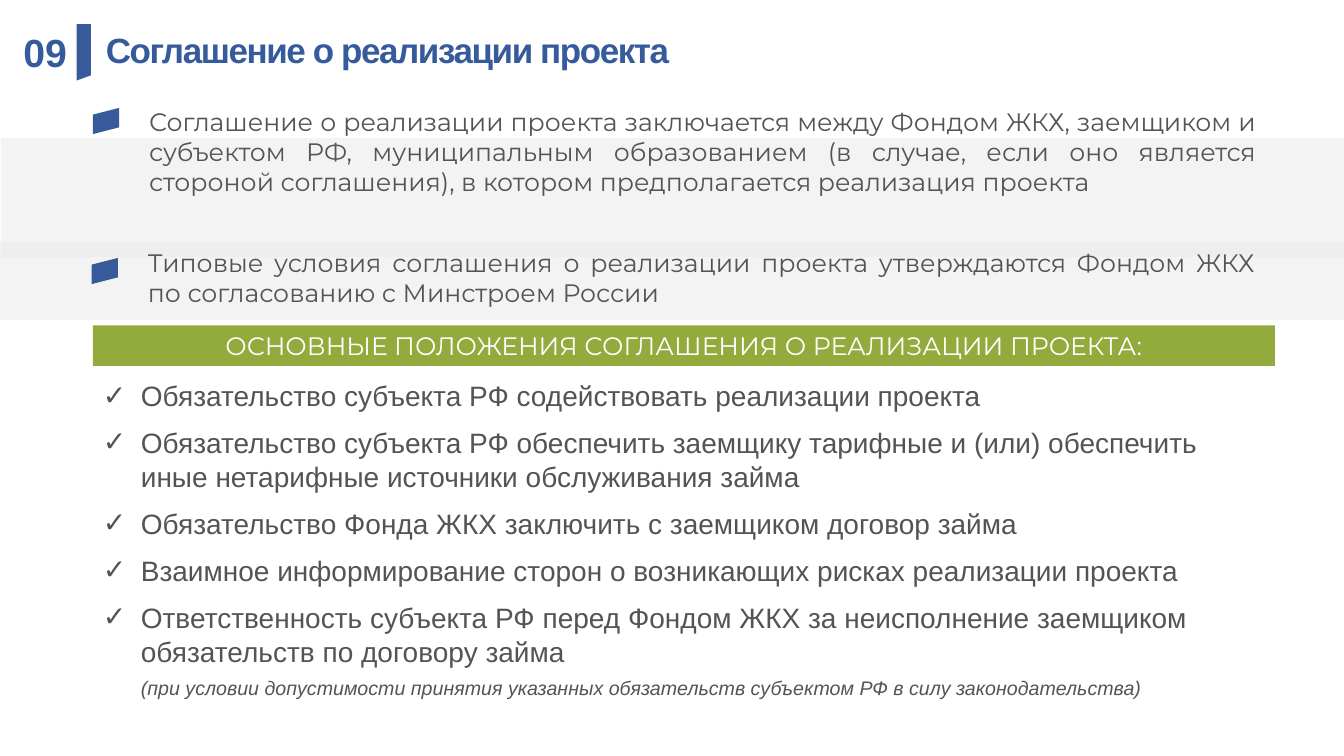
from lxml import etree
from pptx import Presentation
from pptx.dml.color import RGBColor
from pptx.enum.shapes import MSO_SHAPE
from pptx.enum.text import MSO_ANCHOR, MSO_AUTO_SIZE, PP_ALIGN
from pptx.oxml.ns import qn
from pptx.util import Cm, Pt

RECT = MSO_SHAPE.RECTANGLE
TOP, MID = MSO_ANCHOR.TOP, MSO_ANCHOR.MIDDLE
LEFT, CENTER, JUST = PP_ALIGN.LEFT, PP_ALIGN.CENTER, PP_ALIGN.JUSTIFY
FIXED = MSO_AUTO_SIZE.NONE

BLUE, MARK, GREEN = "365B9D", "375A9B", "93AB3C"
GRAY, BAND, WHITE = "545454", "EBEBEB", "FFFFFF"
SANS, MONT = "Arial", "Montserrat"
WIDE = 33.87


def color(target, value):
    target.rgb = RGBColor.from_string(value)


class Deck:
    def __init__(self):
        self.prs = Presentation()
        self.prs.slide_width, self.prs.slide_height = Cm(WIDE), Cm(19.05)
        self.slide = self.prs.slides.add_slide(self.prs.slide_layouts[1])
        self.shapes = self.slide.shapes

    def place(self, shape, x, y, w, h):
        shape.left, shape.top, shape.width, shape.height = Cm(x), Cm(y), Cm(w), Cm(h)

    def frame(self, shape, pad=0.25, anchor=TOP, wrap=True):
        tf = shape.text_frame
        tf.auto_size, tf.word_wrap, tf.vertical_anchor = FIXED, wrap, anchor
        tf.margin_left = tf.margin_right = Cm(pad)
        tf.margin_top = tf.margin_bottom = Cm(0.13)
        return tf

    def add_run(self, par, text, size, font, ink, align=LEFT, bold=False, italic=False):
        par.alignment = align
        run = par.add_run()
        run.text = text
        face = run.font
        face.name, face.size, face.bold, face.italic = font, Pt(size), bold, italic
        color(face.color, ink)
        return run

    def paint(self, shape, fill):
        shape.shadow.inherit = False
        shape.fill.solid()
        color(shape.fill.fore_color, fill)
        shape.line.fill.background()

    def rect(self, x, y, w, h, fill, alpha=None):
        shape = self.shapes.add_shape(RECT, Cm(x), Cm(y), Cm(w), Cm(h))
        self.paint(shape, fill)
        if alpha:
            tint = shape._element.spPr.find(".//" + qn("a:srgbClr"))
            etree.SubElement(tint, qn("a:alpha")).set("val", str(alpha * 1000))
        return shape

    def poly(self, points, fill):
        pts = [(Cm(x), Cm(y)) for x, y in points]
        form = self.shapes.build_freeform(*pts[0])
        form.add_line_segments(pts[1:], close=True)
        self.paint(form.convert_to_shape(), fill)

    def mark(self, x, y):
        side, rise = 0.66, 0.17
        self.poly([(x, y + rise), (x + side, y),
                   (x + side, y + side - rise), (x, y + side)], MARK)

    def text(self, x, y, w, h, **style):
        box = self.shapes.add_textbox(Cm(x), Cm(y), Cm(w), Cm(h))
        return self.frame(box, **style).paragraphs[0]

    def title(self, text):
        shape = self.shapes.title
        self.place(shape, 2.54, 0.71, 29.21, 1.22)
        par = self.frame(shape, 0.13, MID).paragraphs[0]
        par.line_spacing = 0.9
        run = self.add_run(par, text, 25, SANS, BLUE, bold=True)
        run._r.get_or_add_rPr().set("spc", "-100")

    def bullet(self, par, sign):
        props = par._p.get_or_add_pPr()
        props.set("marL", str(Cm(0.96)))
        props.set("indent", str(-Cm(0.96) if sign else 0))
        if sign:
            etree.SubElement(props, qn("a:buFont")).set("typeface", SANS)
            etree.SubElement(props, qn("a:buChar")).set("char", sign)
        else:
            etree.SubElement(props, qn("a:buNone"))

    def items(self, lines, note):
        body = self.slide.placeholders[1]
        self.place(body, 2.34, 9.4, 29.79, 8.46)
        tf = self.frame(body)
        for i, line in enumerate(lines):
            par = tf.add_paragraph() if i else tf.paragraphs[0]
            self.bullet(par, "✓")
            par.space_before = Pt(9.2 if i else 0)
            par.line_spacing = Pt(24.3)
            self.add_run(par, line, 20, SANS, GRAY)
        par = tf.add_paragraph()
        self.bullet(par, None)
        par.space_before = Pt(6)
        self.add_run(par, note, 14, SANS, GRAY, italic=True)


deck = Deck()

# Header
deck.poly([(1.93, 0.61), (2.29, 0.61), (2.29, 1.9), (1.93, 2.03)], MARK)
num = deck.text(0.46, 0.58, 1.37, 1.45, pad=0.13, anchor=MID, wrap=False)
deck.add_run(num, "09", 28, SANS, BLUE, bold=True)
deck.title("Соглашение о реализации проекта")

# Statements on gray bands: band, text, mark
for band, lead, mark, words in [
    ((0.02, 3.48, 33.85, 3), (3.51, 2.54, 28.4, 3.33), (2.34, 2.72),
     "Соглашение о реализации проекта заключается между Фондом ЖКХ, заемщиком и "
     "субъектом РФ, муниципальным образованием (в случае, если оно является "
     "стороной соглашения), в котором предполагается реализация проекта"),
    ((0, 6.1, WIDE, 1.96), (3.48, 6.1, 28.4, 1.8), (2.31, 6.5),
     "Типовые условия соглашения о реализации проекта утверждаются Фондом ЖКХ "
     "по согласованию с Минстроем России"),
]:
    deck.rect(*band, BAND, 56)
    deck.add_run(deck.text(*lead), words, 18, MONT, GRAY, JUST)
    deck.mark(*mark)

# Green heading
head = deck.frame(deck.rect(2.34, 8.2, 29.79, 1.02, GREEN), 0.13).paragraphs[0]
deck.add_run(head, "ОСНОВНЫЕ ПОЛОЖЕНИЯ СОГЛАШЕНИЯ О РЕАЛИЗАЦИИ ПРОЕКТА:",
             18, MONT, WHITE, CENTER)

# Main terms
deck.items([
    "Обязательство субъекта РФ содействовать реализации проекта",
    "Обязательство субъекта РФ обеспечить заемщику тарифные и (или) обеспечить "
    "иные нетарифные источники обслуживания займа",
    "Обязательство Фонда ЖКХ заключить с заемщиком договор займа",
    "Взаимное информирование сторон о возникающих рисках реализации проекта",
    "Ответственность субъекта РФ перед Фондом ЖКХ за неисполнение заемщиком "
    "обязательств по договору займа",
], "(при условии допустимости принятия указанных обязательств субъектом РФ "
   "в силу законодательства)")

deck.prs.save("out.pptx")
